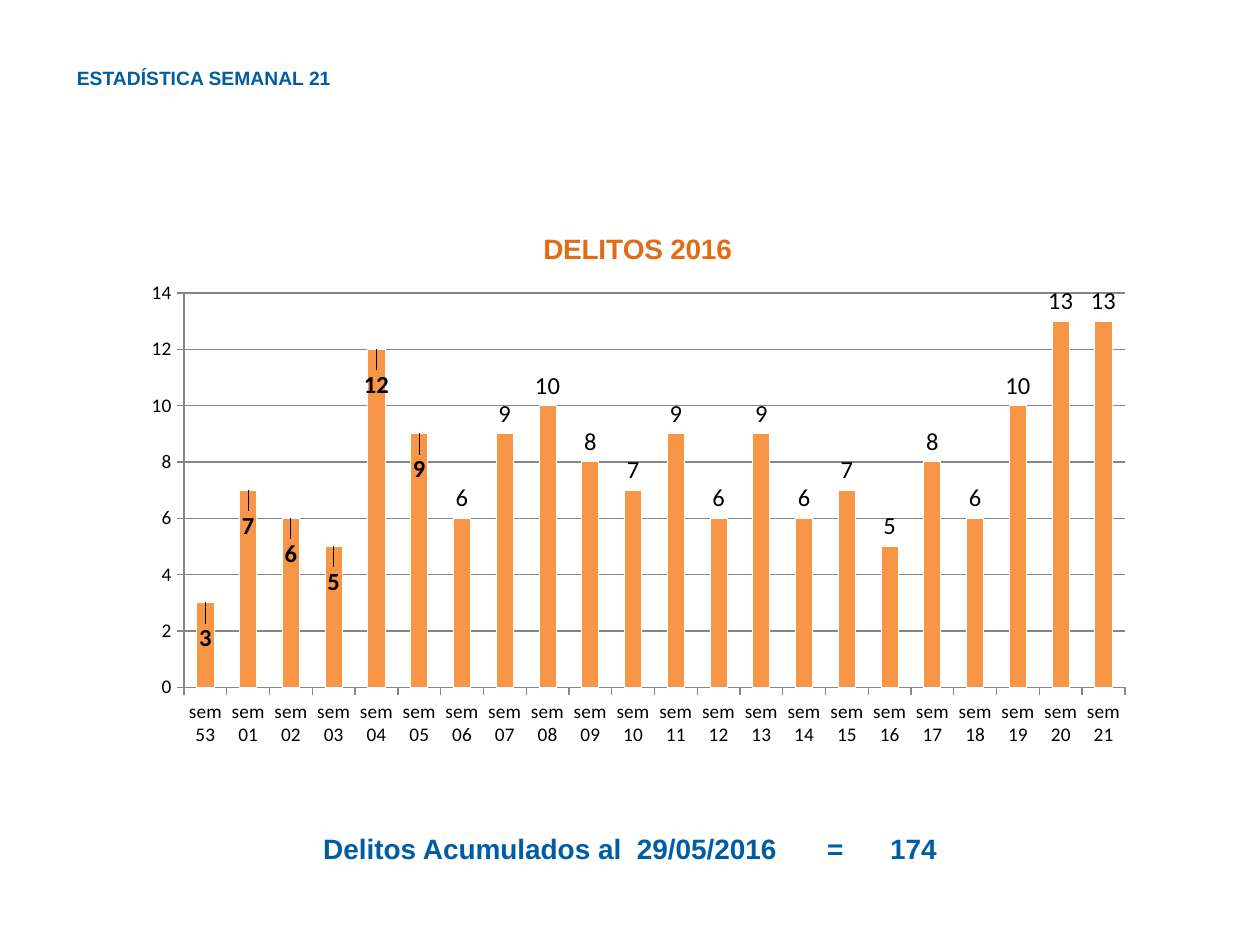
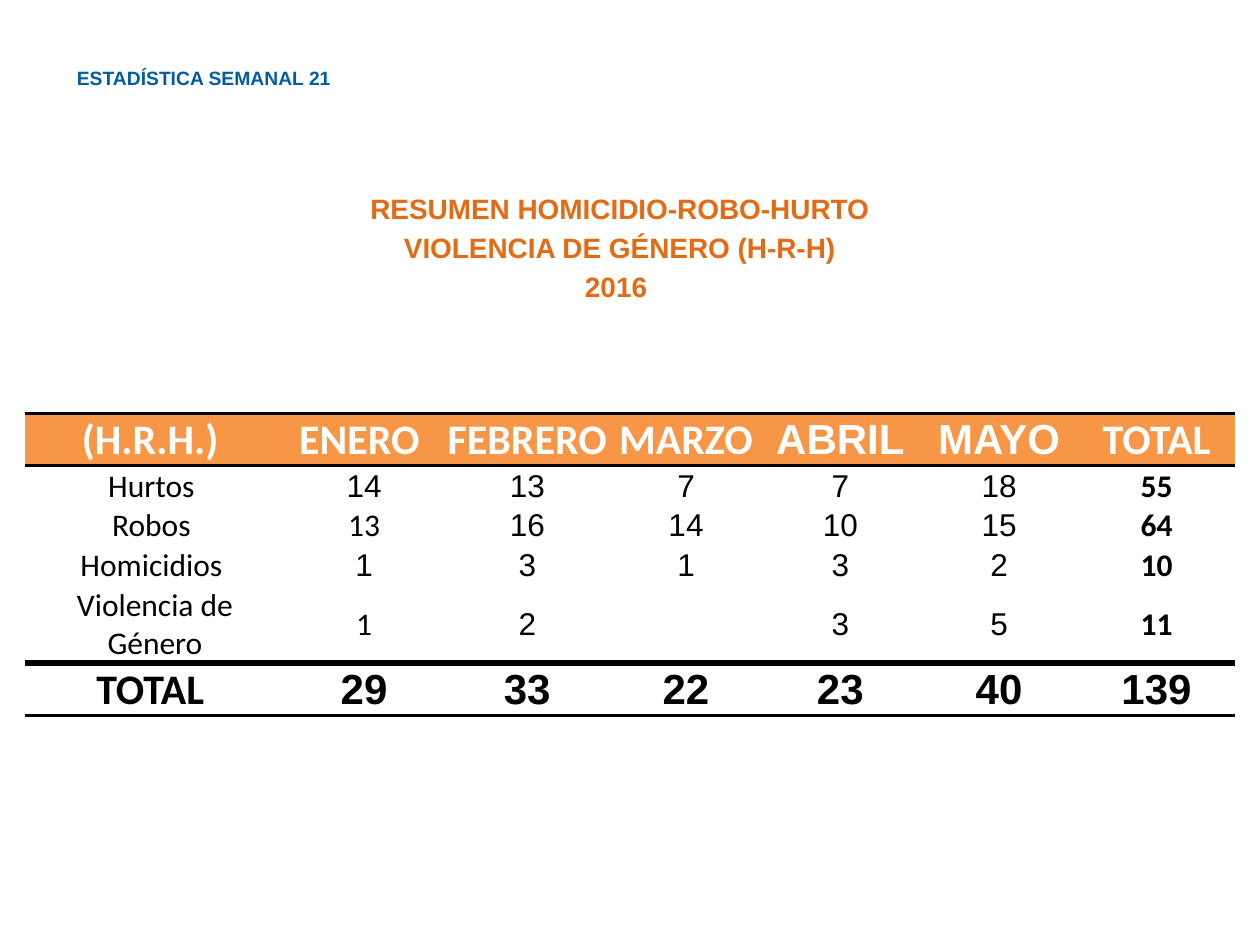
from dataclasses import dataclass

from lxml import etree
from pptx import Presentation
from pptx import util as u
from pptx.chart import data as chart_data
from pptx.dml.color import RGBColor
from pptx.enum import chart as chart_enum
from pptx.enum import text
from pptx.oxml.ns import qn


@dataclass(frozen=True)
class Theme:
    blue: str = "005DA2"
    orange: str = "E16C15"
    fill_orange: str = "F79646"
    grey: str = "868686"
    black: str = "000000"
    white: str = "FFFFFF"
    heading_font: str = "Arial"
    body_font: str = "Calibri"
    header_size: float = 11
    heading_size: float = 16
    axis_size: float = 11
    label_size: float = 14
    cell_size: float = 18
    total_size: float = 24


THEME = Theme()
GRID_COLUMNS, GRID_ROWS = 100, 75
HEADER = "ESTADÍSTICA SEMANAL 21"
NO_GRID_STYLE = "{2D5ABB26-0587-4C30-8999-92F81FD0307C}"

WEEKS = [f"sem {week:02}" for week in (53, *range(1, 22))]
WEEKLY_CRIMES = [3, 7, 6, 5, 12, 9, 6, 9, 10, 8, 7,
                 9, 6, 9, 6, 7, 5, 8, 6, 10, 13, 13]
LOWERED_LABELS = 6

SUMMARY_ROWS = [
    ["(H.R.H.) ", "ENERO ", "FEBRERO", "MARZO", "ABRIL", "MAYO", "TOTAL"],
    ["Hurtos ", "14", "13", "7", "7", "18", "55"],
    ["Robos ", "13", "16", "14", "10", "15", "64"],
    ["Homicidios ", "1", "3", "1", "3", "2", "10"],
    ["Violencia de Género", "1", "2", "", "3", "5", "11"],
    ["TOTAL ", "29", "33", "22", "23", "40", "139"],
]
COLUMN_WIDTHS = [20.6, 12.6, 13.3, 11.9, 12.6, 12.6, 12.4]
ROW_HEIGHTS = [4, 2.3, 2.3, 2.3, 4, 2.7]
CALIBRI_NUMBERS = {(2, 1), (4, 1)}


def style_font(font, size, color, name, bold=False):
    font.size, font.name, font.bold = u.Pt(size), name, bold
    font.color.rgb = RGBColor.from_string(color)


def place_manually(element, index, **shares):
    """Give a chart part a manual layout, in shares of the chart."""
    layout = element.find(qn("c:layout"))
    if layout is None:
        layout = etree.Element(qn("c:layout"))
        element.insert(index, layout)
    manual = etree.SubElement(layout, qn("c:manualLayout"))
    for name, value in shares.items():
        etree.SubElement(manual, qn(f"c:{name}")).set("val", str(value))


def add_cell_borders(cell, top, bottom):
    properties = cell._tc.get_or_add_tcPr()
    for index, (side, width) in enumerate((("lnT", top), ("lnB", bottom))):
        line = etree.Element(qn(f"a:{side}"), w=str(u.Pt(width)))
        fill = etree.SubElement(line, qn("a:solidFill"))
        etree.SubElement(fill, qn("a:srgbClr"), val=THEME.black)
        properties.insert(index, line)


class Deck:
    """Holds the theme and the current slide; lengths are grid units."""

    def __init__(self, theme):
        self.theme = theme
        self.presentation = Presentation()
        self.presentation.slide_width = u.Inches(10)
        self.presentation.slide_height = u.Inches(7.5)
        self.slide = None

    def across(self, columns):
        return round(self.presentation.slide_width * columns / GRID_COLUMNS)

    def down(self, rows):
        return round(self.presentation.slide_height * rows / GRID_ROWS)

    def box(self, left, top, width, height):
        return (self.across(left), self.down(top),
                self.across(width), self.down(height))

    def new_slide(self, layout_index):
        layout = self.presentation.slide_layouts[layout_index]
        self.slide = self.presentation.slides.add_slide(layout)
        self.fill_text(self.slide.shapes.title, (5.1, 4.7, 52.8, 2.9), HEADER,
                       self.theme.header_size, self.theme.blue,
                       text.PP_ALIGN.LEFT)

    def fill_text(self, shape, area, content, size, color,
                  alignment=text.PP_ALIGN.CENTER,
                  anchor=text.MSO_ANCHOR.MIDDLE):
        shape.left, shape.top, shape.width, shape.height = self.box(*area)
        frame = shape.text_frame
        frame.text = content
        frame.word_wrap = True
        frame.auto_size = text.MSO_AUTO_SIZE.NONE
        frame.vertical_anchor = anchor
        frame.paragraphs[0].space_before = u.Pt(0)
        for paragraph in frame.paragraphs:
            paragraph.alignment = alignment
            for run in paragraph.runs:
                style_font(run.font, size, color, self.theme.heading_font, True)

    def subtitle(self, area, content):
        self.fill_text(self.slide.placeholders[1], area, content,
                       self.theme.heading_size, self.theme.orange,
                       anchor=text.MSO_ANCHOR.TOP)

    def caption(self, area, content):
        shape = self.slide.shapes.add_textbox(*self.box(*area))
        self.fill_text(shape, area, content,
                       self.theme.heading_size, self.theme.blue)

    def column_chart(self, area, title, categories, values):
        theme = self.theme
        source = chart_data.CategoryChartData()
        source.categories = categories
        source.add_series("Series 1", values)
        chart = self.slide.shapes.add_chart(
            chart_enum.XL_CHART_TYPE.COLUMN_CLUSTERED,
            *self.box(*area), source).chart
        style_font(chart.font, theme.axis_size, theme.black, theme.body_font)
        chart.has_legend = False
        chart.has_title = True
        chart.chart_title.text_frame.text = title
        title_run = chart.chart_title.text_frame.paragraphs[0].runs[0]
        style_font(title_run.font, theme.heading_size, theme.orange,
                   theme.heading_font, True)
        place_manually(chart.chart_title._element, 1,
                       xMode="edge", yMode="edge", x=0.4, y=0.04)
        plot_area = chart._chartSpace.find(f".//{qn('c:plotArea')}")
        place_manually(plot_area, 0, layoutTarget="inner", xMode="edge",
                       yMode="edge", x=0.05, y=0.16, w=0.93, h=0.71)

        value_axis = chart.value_axis
        value_axis.minimum_scale, value_axis.maximum_scale = 0, 14
        value_axis.major_unit = 2
        value_axis.has_major_gridlines = True
        for axis in (chart.category_axis, value_axis):
            axis.major_tick_mark = chart_enum.XL_TICK_MARK.OUTSIDE
            style_font(axis.tick_labels.font, theme.axis_size,
                       theme.black, theme.body_font)
        for part in (chart.category_axis, value_axis,
                     value_axis.major_gridlines):
            part.format.line.color.rgb = RGBColor.from_string(theme.grey)
            part.format.line.width = u.Pt(0.75)

        plot = chart.plots[0]
        plot.gap_width = 150
        plot.vary_by_categories = False
        series = plot.series[0]
        series.format.fill.solid()
        series.format.fill.fore_color.rgb = RGBColor.from_string(
            theme.fill_orange)
        series.format.line.color.rgb = RGBColor.from_string(theme.white)
        self.label_columns(series)

    def label_columns(self, series):
        """Show every value, with the first weeks bold and inside the bars."""
        theme = self.theme
        labels = series.data_labels
        labels.show_value = True
        labels.position = chart_enum.XL_LABEL_POSITION.OUTSIDE_END
        style_font(labels.font, theme.label_size, theme.black, theme.body_font)
        for index in range(LOWERED_LABELS):
            label = series.points[index].data_label
            style_font(label.font, theme.label_size, theme.black,
                       theme.body_font, True)
            label.position = chart_enum.XL_LABEL_POSITION.OUTSIDE_END
        for element in labels._element.findall(qn("c:dLbl")):
            place_manually(element, 1, x=0, y=0.1)

    def summary_table(self, left, top, rows, widths, heights):
        area = self.box(left, top, sum(widths), sum(heights))
        table = self.slide.shapes.add_table(len(rows), len(widths), *area).table
        table.first_row = table.horz_banding = False
        table._tbl.tblPr.find(qn("a:tableStyleId")).text = NO_GRID_STYLE
        for column, width in zip(table.columns, widths):
            column.width = self.across(width)
        for row, height in zip(table.rows, heights):
            row.height = self.down(height)
        for row_index, row in enumerate(rows):
            for column_index, content in enumerate(row):
                self.summary_cell(table, row_index, column_index, content)

    def summary_cell(self, table, row, column, content):
        theme = self.theme
        last_row, last_column = len(table.rows) - 1, len(table.columns) - 1
        is_header, is_total = row == 0, row == last_row
        if is_header:
            uses_arial = column in (4, 5)
        elif is_total:
            uses_arial = column > 0
        else:
            uses_arial = (0 < column < last_column
                          and (row, column) not in CALIBRI_NUMBERS)

        cell = table.cell(row, column)
        cell.margin_left = cell.margin_top = cell.margin_right = u.Inches(0.01)
        cell.margin_bottom = 0
        cell.vertical_anchor = text.MSO_ANCHOR.MIDDLE
        cell.fill.solid()
        cell.fill.fore_color.rgb = RGBColor.from_string(
            theme.fill_orange if is_header else theme.white)
        if is_header or is_total:
            add_cell_borders(cell, top=4 if is_total else 2, bottom=2)
        cell.text_frame.text = content
        paragraph = cell.text_frame.paragraphs[0]
        paragraph.alignment = text.PP_ALIGN.CENTER
        for run in paragraph.runs:
            style_font(
                run.font,
                theme.total_size if is_header or is_total else theme.cell_size,
                theme.white if is_header else theme.black,
                theme.heading_font if uses_arial else theme.body_font,
                is_header or is_total or column == last_column)


def main():
    deck = Deck(THEME)

    deck.new_slide(layout_index=5)
    deck.column_chart((10.6, 16.2, 80.3, 44.1), "DELITOS 2016",
                      WEEKS, WEEKLY_CRIMES)
    deck.caption((0, 65.1, 100, 4.4),
                 "Delitos Acumulados al  29/05/2016\t=\t174")

    deck.new_slide(layout_index=0)
    deck.subtitle((4.3, 14.7, 89.8, 10.2),
                  "RESUMEN HOMICIDIO-ROBO-HURTO\n"
                  "VIOLENCIA DE GÉNERO (H-R-H)\n2016 ")
    deck.summary_table(2, 32.8, SUMMARY_ROWS, COLUMN_WIDTHS, ROW_HEIGHTS)

    deck.presentation.save("out.pptx")


if __name__ == "__main__":
    main()
